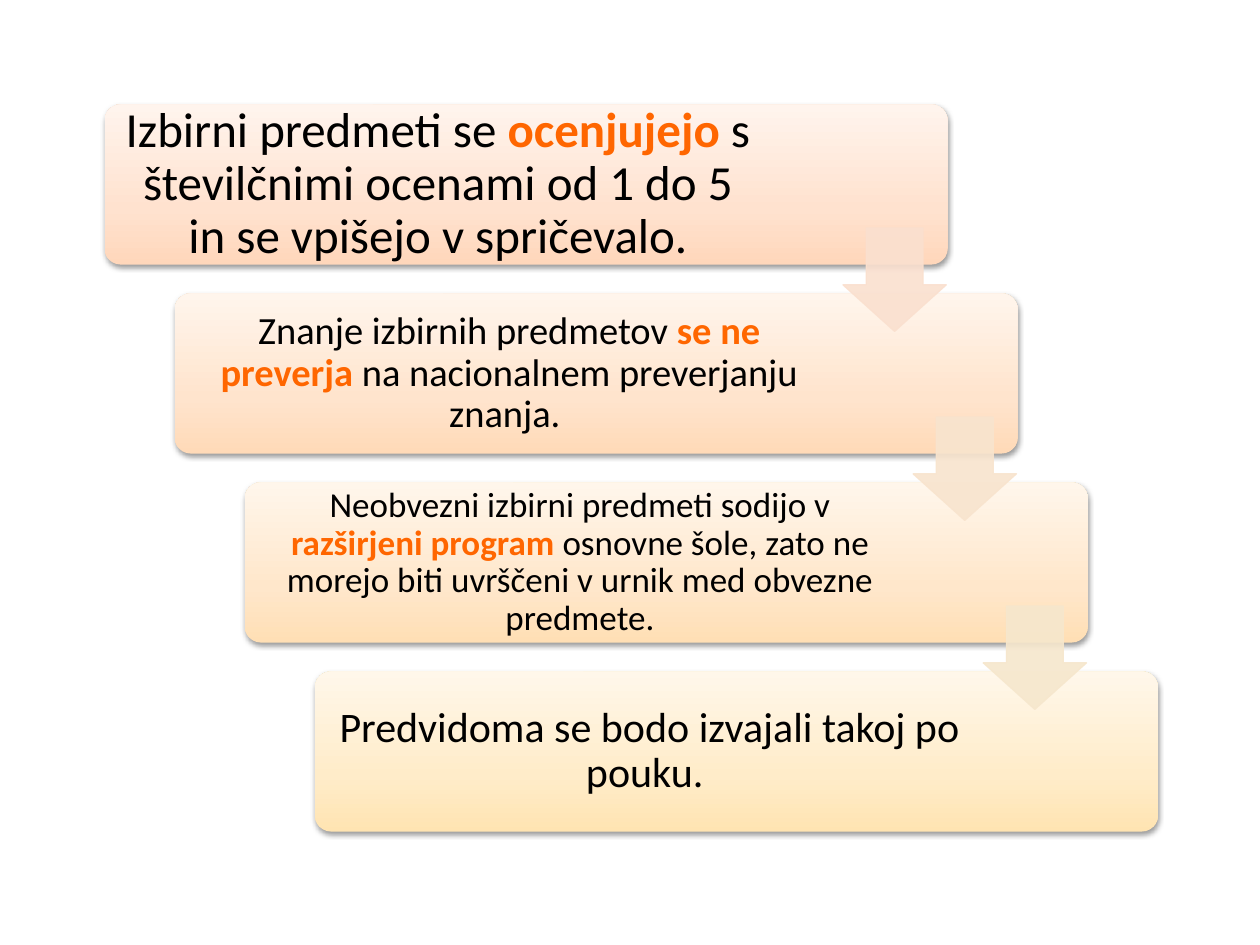
import pptx
import pptx.dml.color
import pptx.enum.shapes
import pptx.enum.text
import pptx.oxml
import pptx.oxml.ns
import pptx.util
from pptx.util import Inches

LEFT, TOP = 0.83, 0.83
STEP_X, STEP_Y = 1.67 / 3, 1.5
CARD_W, CARD_H = 6.69, 1.27
ARROW_SIZE = 0.82
ARROW_DX, ARROW_DY = 5.86, 0.98
BLACK, ORANGE = "000000", "FF6600"

# Gradient colours (bottom to top), text size, inset, text width, (text, emphasised) runs
STEPS = [
    (("FFD7BB", "FFE2CF", "FFF4ED"), 28, 0.12, 5.21,
     [("Izbirni predmeti se ", False), ("ocenjujejo", True),
      (" s številčnimi ocenami od 1 do 5 in se vpišejo v spričevalo.", False)]),
    (("FFDAB8", "FFE4CD", "FFF5EC"), 22, 0.09, 5.23,
     [("Znanje izbirnih predmetov ", False), ("se ne preverja ", True),
      ("na nacionalnem preverjanju znanja. ", False)]),
    (("FFDFB5", "FFE7CB", "FFF6EB"), 20, 0.08, 5.24,
     [("Neobvezni izbirni predmeti sodijo v ", False), ("razširjeni program ", True),
      ("osnovne šole, zato ne morejo biti uvrščeni v urnik med obvezne predmete.", False)]),
    (("FFE4B2", "FFECC9", "FFF7EA"), 24, 0.10, 5.23,
     [("Predvidoma se bodo izvajali takoj po pouku. ", False)]),
]
ARROW_COLOURS = ["FAE0CF", "F8E4CE", "F6E7CD"]


def rgb(colour):
    return pptx.dml.color.RGBColor.from_string(colour)


def xml(markup):
    """Parse one DrawingML element written with the a: prefix."""
    tag, rest = markup.split(" ", 1)
    return pptx.oxml.parse_xml(f"{tag} {pptx.oxml.ns.nsdecls('a')} {rest}")


def add_card(slide, left, top, colours):
    card = slide.shapes.add_shape(
        pptx.enum.shapes.MSO_SHAPE.ROUNDED_RECTANGLE,
        Inches(left), Inches(top), Inches(CARD_W), Inches(CARD_H))
    card.adjustments[0] = 0.1
    card.line.fill.background()

    # Three-stop gradient running upwards
    card.fill.gradient()
    card.fill.gradient_angle = 90
    stops = card.fill._xPr.find(pptx.oxml.ns.qn("a:gradFill")).gsLst
    for stop in list(stops):
        stops.remove(stop)
    for position, colour in zip((0, 35, 100), colours):
        stops.append(xml(f'<a:gs pos="{position * 1000}"><a:srgbClr val="{colour}"/></a:gs>'))

    # Soft shadow below the card
    card.shadow.inherit = False
    effects = card._element.spPr.find(pptx.oxml.ns.qn("a:effectLst"))
    effects.append(xml(
        '<a:outerShdw blurRad="40000" dist="20000" dir="5400000" rotWithShape="0">'
        '<a:srgbClr val="000000"><a:alpha val="38000"/></a:srgbClr></a:outerShdw>'))


def add_text(slide, left, top, width, height, runs, size, inset):
    box = slide.shapes.add_textbox(Inches(left), Inches(top), Inches(width), Inches(height))
    frame = box.text_frame
    frame.word_wrap = True
    frame.vertical_anchor = pptx.enum.text.MSO_ANCHOR.MIDDLE
    frame.margin_left = frame.margin_right = Inches(inset)
    frame.margin_top = frame.margin_bottom = Inches(inset)
    paragraph = frame.paragraphs[0]
    paragraph.alignment = pptx.enum.text.PP_ALIGN.CENTER
    paragraph.line_spacing = 0.9
    for text, emphasised in runs:
        run = paragraph.add_run()
        run.text = text
        run.font.name = "Calibri"
        run.font.size = pptx.util.Pt(size)
        run.font.bold = emphasised
        run.font.color.rgb = rgb(ORANGE if emphasised else BLACK)


def add_arrow(slide, left, top, colour):
    arrow = slide.shapes.add_shape(
        pptx.enum.shapes.MSO_SHAPE.DOWN_ARROW,
        Inches(left), Inches(top), Inches(ARROW_SIZE), Inches(ARROW_SIZE))
    arrow.adjustments[0] = 0.55
    arrow.adjustments[1] = 0.45
    arrow.shadow.inherit = False
    arrow.line.width = pptx.util.Pt(0.75)
    for fill in (arrow.fill, arrow.line.fill):
        fill.solid()
        fill.fore_color.rgb = rgb(colour)
    # Slight transparency on both fill and outline
    for colour_element in arrow._element.spPr.iter(pptx.oxml.ns.qn("a:srgbClr")):
        colour_element.append(xml('<a:alpha val="90000"/>'))


def main():
    deck = pptx.Presentation()
    deck.slide_width, deck.slide_height = Inches(10), Inches(7.5)
    slide = deck.slides.add_slide(deck.slide_layouts[6])

    # Staircase of cards
    for i, (colours, size, inset, text_width, runs) in enumerate(STEPS):
        left, top = LEFT + i * STEP_X, TOP + i * STEP_Y
        add_card(slide, left, top, colours)
        add_text(slide, left + 0.04, top + 0.04, text_width, CARD_H - 0.08,
                 runs, size=size, inset=inset)

    # Arrows leading from each card to the next
    for i, colour in enumerate(ARROW_COLOURS):
        add_arrow(slide, LEFT + ARROW_DX + i * STEP_X, TOP + ARROW_DY + i * STEP_Y, colour)

    deck.save("out.pptx")


if __name__ == "__main__":
    main()
